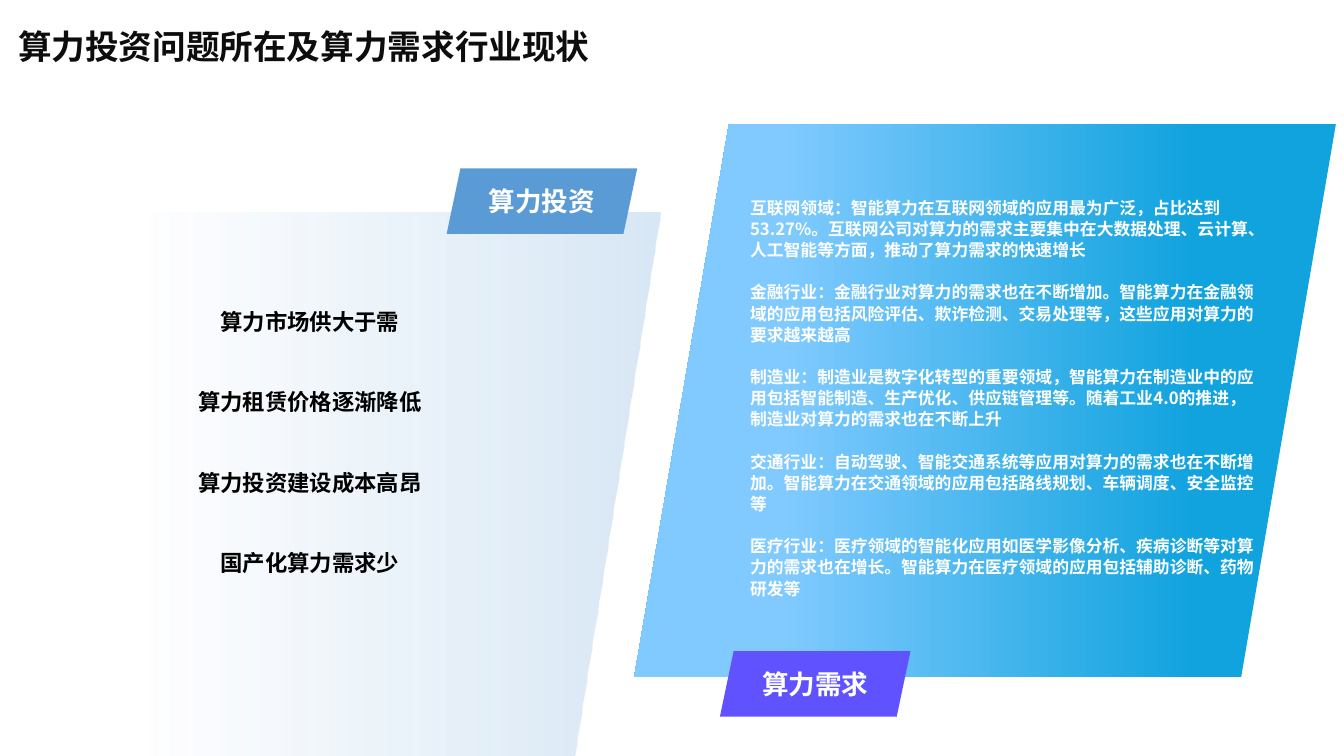
from lxml.etree import SubElement
from pptx import Presentation
from pptx.dml.color import RGBColor
from pptx.enum.shapes import MSO_SHAPE
from pptx.enum.text import MSO_ANCHOR, PP_ALIGN
from pptx.oxml.ns import qn
from pptx.util import Inches, Pt

TITLE = "算力投资问题所在及算力需求行业现状"
INVESTMENT = [
    "算力市场供大于需",
    "算力租赁价格逐渐降低",
    "算力投资建设成本高昂",
    "国产化算力需求少",
]
DEMAND = [
    "互联网领域：智能算力在互联网领域的应用最为广泛，占比达到53.27%。互联网公司对算力的需求主要集中在大数据处理、云计算、人工智能等方面，推动了算力需求的快速增长",
    "金融行业：金融行业对算力的需求也在不断增加。智能算力在金融领域的应用包括风险评估、欺诈检测、交易处理等，这些应用对算力的要求越来越高",
    "制造业：制造业是数字化转型的重要领域，智能算力在制造业中的应用包括智能制造、生产优化、供应链管理等。随着工业4.0的推进，制造业对算力的需求也在不断上升",
    "交通行业：自动驾驶、智能交通系统等应用对算力的需求也在不断增加。智能算力在交通领域的应用包括路线规划、车辆调度、安全监控等",
    "医疗行业：医疗领域的智能化应用如医学影像分析、疾病诊断等对算力的需求也在增长。智能算力在医疗领域的应用包括辅助诊断、药物研发等",
]


def rgb(color):
    return RGBColor.from_string(color)


def write(tf, lines, font, size, color, align=PP_ALIGN.LEFT, spacing=1.0, gap=0):
    for i, line in enumerate(lines):
        p = tf.paragraphs[0] if i == 0 else tf.add_paragraph()
        p.alignment = align
        p.line_spacing = spacing
        if i:
            p.space_before = Pt(gap)
        r = p.add_run()
        r.text = line
        r.font.name = font
        r.font.size = Pt(size)
        r.font.bold = True
        r.font.color.rgb = rgb(color)
        SubElement(r.font._element, qn("a:ea"), typeface=font)


class Deck:
    font = "Noto Sans CJK SC"

    def __init__(self, prs):
        self.s = prs.slides.add_slide(prs.slide_layouts[6])

    def text(self, box, lines, insets=(0, 0, 0, 0), anchor=MSO_ANCHOR.TOP, **fmt):
        tf = self.s.shapes.add_textbox(*map(Inches, box)).text_frame
        tf.word_wrap = True
        tf.vertical_anchor = anchor
        tf.margin_left, tf.margin_top, tf.margin_right, tf.margin_bottom = map(Inches, insets)
        write(tf, lines, self.font, **fmt)

    def label(self, left, top, text, fill):
        sp = self.s.shapes.add_shape(
            MSO_SHAPE.PARALLELOGRAM, Inches(left), Inches(top), Inches(1.89), Inches(0.65))
        sp.adjustments[0] = 0.21
        sp.shadow.inherit = False
        sp.fill.solid()
        sp.fill.fore_color.rgb = rgb(fill)
        sp.line.fill.background()
        sp.text_frame.vertical_anchor = MSO_ANCHOR.MIDDLE
        write(sp.text_frame, [text], self.font, 19, "FFFFFF", PP_ALIGN.CENTER)

    def panel(self, left, top, width, height, skew, angle, stops):
        right, bottom = left + width, top + height
        corners = [(right - skew, bottom), (left, bottom), (left + skew, top), (right, top)]
        points = [(Inches(x), Inches(y)) for x, y in corners]
        fb = self.s.shapes.build_freeform(*points[0])
        fb.add_line_segments(points[1:], close=True)
        sp = fb.convert_to_shape()
        sp.shadow.inherit = False
        sp.line.fill.background()
        sp.fill.gradient()
        sp.fill.gradient_angle = angle
        for stop, (position, color, alpha) in zip(sp.fill.gradient_stops, stops):
            stop.position = position
            stop.color.rgb = rgb(color)
            if alpha < 1:
                clr = stop._gs.find(qn("a:srgbClr"))
                SubElement(clr, qn("a:alpha"), val=str(int(alpha * 100000)))


def main():
    prs = Presentation()
    prs.slide_width, prs.slide_height = Inches(13.33), Inches(7.5)
    deck = Deck(prs)
    deck.text((0.01, 0.1, 11.27, 0.76), [TITLE], insets=(0.17, 0.05, 0.1, 0.05),
              anchor=MSO_ANCHOR.MIDDLE, size=24, color="0D0D0D", spacing=0.9)
    deck.panel(6.29, 1.23, 6.96, 5.49, 0.94, 180,
               [(0.2, "11A3DE", 1), (0.79, "80CAFF", 1)])
    deck.label(7.14, 6.46, "算力需求", "6053FF")
    deck.panel(0.16, 2.11, 6.39, 5.42, 0.86, 0,
               [(0.2, "9DC3E6", 0), (1, "9DC3E6", 0.4)])
    deck.label(4.43, 1.67, "算力投资", "5B9BD5")
    deck.text((0.6, 2.92, 4.95, 3.67), INVESTMENT, size=16, color="000000",
              align=PP_ALIGN.CENTER, spacing=1.5, gap=28.8)
    deck.text((7.44, 1.95, 5.06, 4.63), DEMAND, size=12, color="FFFFFF",
              spacing=1.05, gap=15.1)
    prs.save("out.pptx")


if __name__ == "__main__":
    main()
